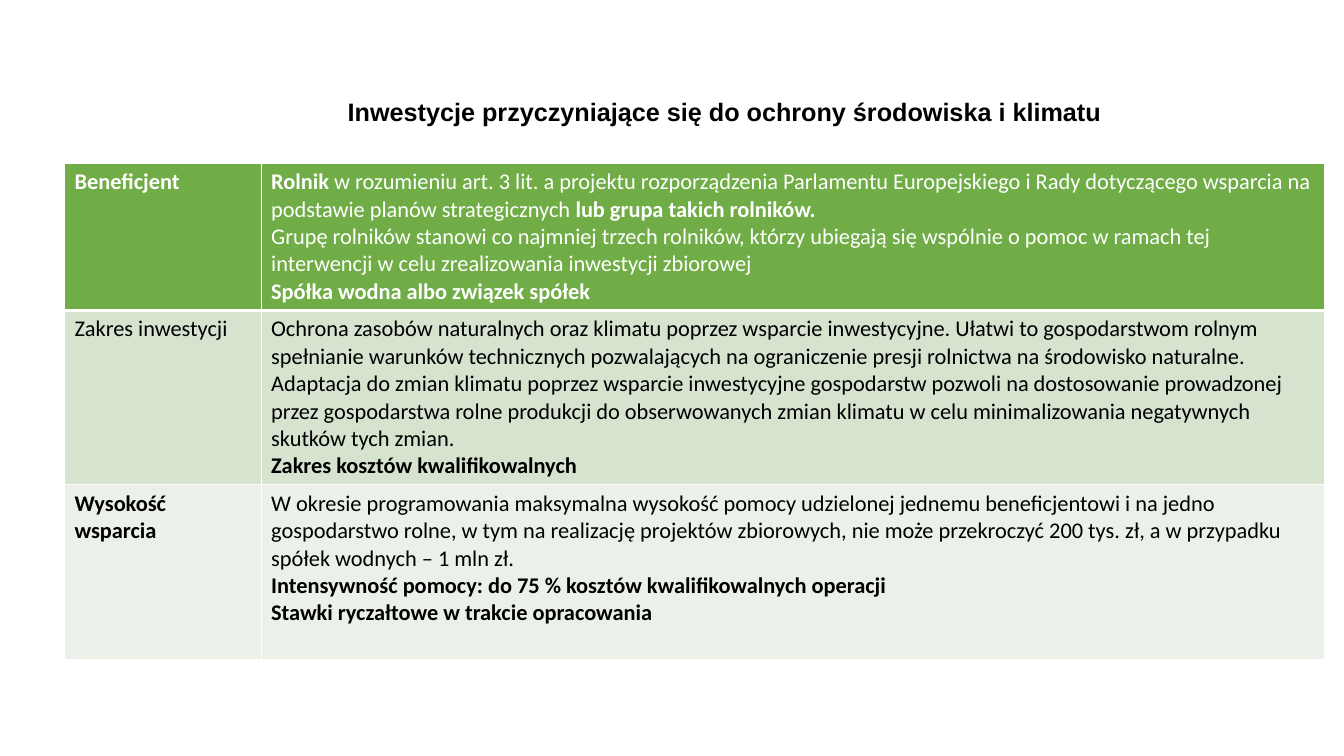
"""Build a slide with a table on investments that protect the environment and climate."""
from typing import NamedTuple

from lxml import etree
from pptx import Presentation
from pptx import util as u
from pptx.dml.color import RGBColor
from pptx.enum import text
from pptx.oxml.ns import qn

WHITE = RGBColor(0xFF, 0xFF, 0xFF)
BLACK = RGBColor(0, 0, 0)
GREEN = RGBColor(0x70, 0xAD, 0x47)
PALE_GREEN = RGBColor(0xD5, 0xE3, 0xCF)
PALEST_GREEN = RGBColor(0xEB, 0xF1, 0xE9)

SLIDE_WIDTH, SLIDE_HEIGHT = u.Inches(13.33), u.Inches(7.5)
GRID = 100
TITLE = "Inwestycje przyczyniające się do ochrony środowiska i klimatu"
COLUMN_WIDTHS = (14.63, 79.13)
THIN, THICK = u.Pt(1), u.Pt(3)


class Run(NamedTuple):
    words: str
    bold: bool = False


class Topic(NamedTuple):
    label: Run
    details: list[list[Run]]
    fill: RGBColor
    color: RGBColor
    height: float
    top_border: int = THIN
    bottom_border: int = THIN


TOPICS = [
    Topic(
        Run("Beneficjent", True),
        [
            [
                Run("Rolnik ", True),
                Run("w rozumieniu art. 3 lit. a projektu rozporządzenia Parlamentu Europejskiego i Rady "
                    "dotyczącego wsparcia na podstawie planów strategicznych "),
                Run("lub grupa takich rolników.", True),
            ],
            [Run("Grupę rolników stanowi co najmniej trzech rolników, którzy ubiegają się wspólnie o pomoc "
                 "w ramach tej interwencji w celu zrealizowania inwestycji zbiorowej")],
            [Run("Spółka wodna albo związek spółek", True)],
        ],
        GREEN, WHITE, 19.47, bottom_border=THICK,
    ),
    Topic(
        Run("Zakres inwestycji"),
        [
            [Run("Ochrona zasobów naturalnych oraz klimatu poprzez wsparcie inwestycyjne. Ułatwi to "
                 "gospodarstwom rolnym spełnianie warunków technicznych pozwalających na ograniczenie "
                 "presji rolnictwa na środowisko naturalne.")],
            [Run("Adaptacja do zmian klimatu poprzez wsparcie inwestycyjne gospodarstw pozwoli na "
                 "dostosowanie prowadzonej przez gospodarstwa rolne produkcji do obserwowanych zmian "
                 "klimatu w celu minimalizowania negatywnych skutków tych zmian.")],
            [Run("Zakres kosztów kwalifikowalnych", True)],
        ],
        PALE_GREEN, BLACK, 23.07, top_border=THICK,
    ),
    Topic(
        Run("Wysokość wsparcia", True),
        [
            [Run("W okresie programowania maksymalna wysokość pomocy udzielonej jednemu beneficjentowi "
                 "i na jedno gospodarstwo rolne, w tym na realizację projektów zbiorowych, nie może "
                 "przekroczyć 200 tys. zł, a w przypadku spółek wodnych – 1 mln zł.")],
            [Run("Intensywność pomocy: do 75 % kosztów kwalifikowalnych operacji", True)],
            [Run("Stawki ryczałtowe w trakcie opracowania", True)],
        ],
        PALEST_GREEN, BLACK, 23.07,
    ),
]


def across(columns: float) -> int:
    """Return the length of the given grid columns."""
    return round(SLIDE_WIDTH * columns / GRID)


def down(rows: float) -> int:
    """Return the length of the given grid rows."""
    return round(SLIDE_HEIGHT * rows / GRID)


def add_title(slide) -> None:
    """Add the heading above the table."""
    box = slide.shapes.add_textbox(across(25.13), down(5.33), across(67.95), down(19.33))
    frame = box.text_frame
    frame.word_wrap = True
    frame.vertical_anchor = text.MSO_ANCHOR.MIDDLE
    paragraph = frame.paragraphs[0]
    paragraph.text = TITLE
    paragraph.line_spacing = 0.9
    font = paragraph.font
    font.name, font.size, font.bold = "Arial", u.Pt(18), True
    font.color.rgb = BLACK


def set_borders(cell, topic: Topic) -> None:
    """Draw white lines on the four sides of a cell."""
    properties = cell._tc.get_or_add_tcPr()
    widths = {"L": THIN, "R": THIN, "T": topic.top_border, "B": topic.bottom_border}
    for position, (side, width) in enumerate(widths.items()):
        line = etree.Element(qn(f"a:ln{side}"), w=str(width))
        fill = etree.SubElement(line, qn("a:solidFill"))
        etree.SubElement(fill, qn("a:srgbClr"), val=str(WHITE))
        properties.insert(position, line)


def fill_cell(cell, paragraphs: list[list[Run]], topic: Topic) -> None:
    """Write the paragraphs into a cell and colour it."""
    cell.fill.solid()
    cell.fill.fore_color.rgb = topic.fill
    set_borders(cell, topic)
    frame = cell.text_frame
    for index, runs in enumerate(paragraphs):
        paragraph = frame.add_paragraph() if index else frame.paragraphs[0]
        font = paragraph.font
        font.name, font.size = "Calibri", u.Pt(16)
        font.color.rgb = topic.color
        for item in runs:
            run = paragraph.add_run()
            run.text = item.words
            run.font.bold = item.bold


def add_topics(slide) -> None:
    """Add the table with one row for each topic."""
    heights = [topic.height for topic in TOPICS]
    table = slide.shapes.add_table(
        len(TOPICS), len(COLUMN_WIDTHS), across(4.8), down(21.6),
        across(sum(COLUMN_WIDTHS)), down(sum(heights)),
    ).table
    table.first_row = table.horz_banding = False
    for column, width in zip(table.columns, COLUMN_WIDTHS):
        column.width = across(width)
    for row, topic in zip(table.rows, TOPICS):
        row.height = down(topic.height)
        for cell, paragraphs in zip(row.cells, ([[topic.label]], topic.details)):
            fill_cell(cell, paragraphs, topic)


def main() -> None:
    """Build and save the presentation."""
    presentation = Presentation()
    presentation.slide_width, presentation.slide_height = SLIDE_WIDTH, SLIDE_HEIGHT
    slide = presentation.slides.add_slide(presentation.slide_layouts[6])
    add_title(slide)
    add_topics(slide)
    presentation.save("out.pptx")


if __name__ == "__main__":
    main()
